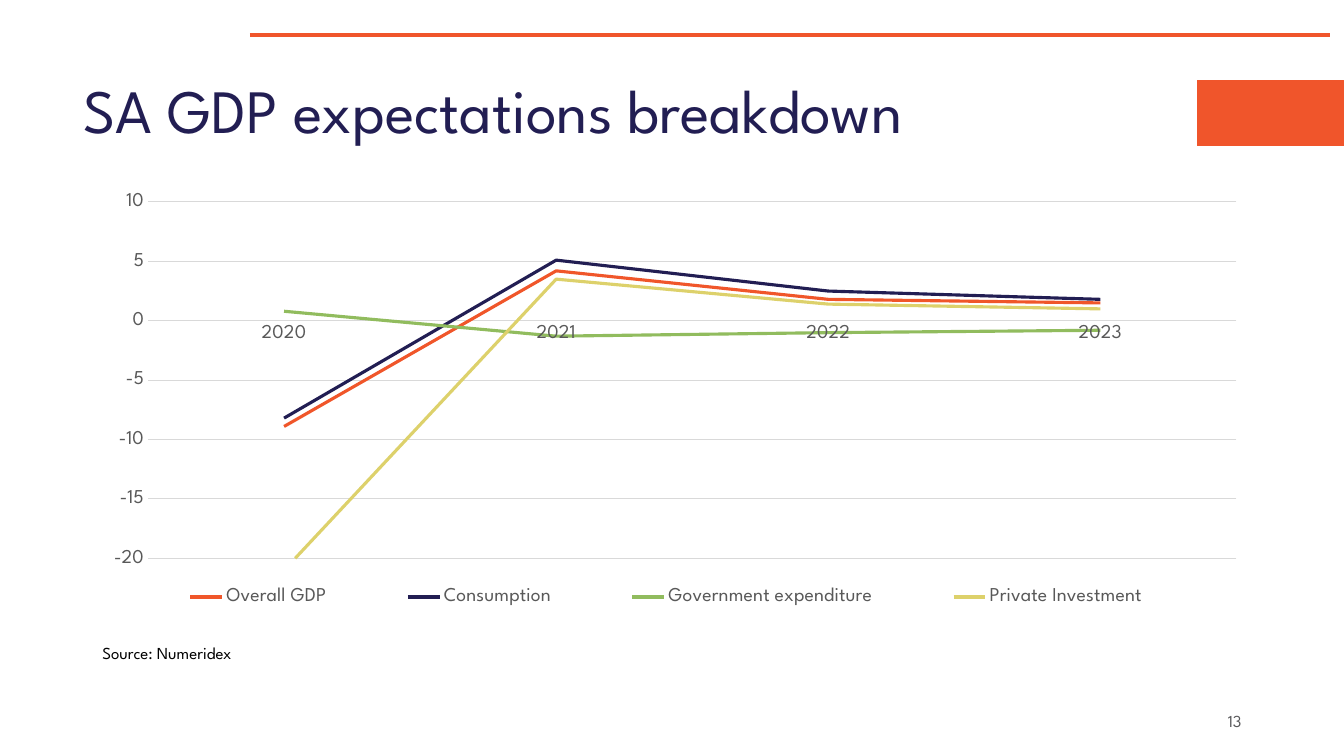
from typing import NamedTuple

from lxml.etree import SubElement
from pptx import Presentation
from pptx.chart.data import CategoryChartData as ChartData
from pptx.dml.color import RGBColor
from pptx.enum.chart import XL_CHART_TYPE as Kind, XL_LEGEND_POSITION as Place, XL_TICK_MARK as Tick
from pptx.enum.shapes import MSO_CONNECTOR as Link, MSO_SHAPE as Form
from pptx.enum.text import MSO_ANCHOR as Anchor, MSO_AUTO_SIZE as Fit, PP_ALIGN as Align
from pptx.oxml import parse_xml
from pptx.oxml.ns import nsdecls, qn
from pptx.util import Pt

FONT = "League Spartan"
ORANGE = RGBColor(0xF0, 0x55, 0x2B)
CORAL = RGBColor(0xF0, 0x56, 0x2A)
NAVY = RGBColor(0x22, 0x1E, 0x53)
GREEN = RGBColor(0x91, 0xBC, 0x5E)
YELLOW = RGBColor(0xDD, 0xD1, 0x6B)
GREY = RGBColor(0x59, 0x59, 0x59)
SLATE = RGBColor(0x58, 0x58, 0x5A)
PALE = RGBColor(0xD9, 0xD9, 0xD9)
BLACK = RGBColor(0, 0, 0)


class Box(NamedTuple):
    x: float
    y: float
    w: float
    h: float

    def pts(self) -> tuple:
        return tuple(Pt(n) for n in self)


class Note(NamedTuple):
    text: str
    box: Box
    color: RGBColor
    align: Align
    anchor: Anchor


class Trend(NamedTuple):
    name: str
    vals: tuple
    color: RGBColor


YEARS = ("2020", "2021", "2022", "2023")
TRENDS = (
    Trend("Overall GDP", (-8.9, 4.2, 1.8, 1.5), CORAL),
    Trend("Consumption", (-8.2, 5.1, 2.5, 1.8), NAVY),
    Trend("Government expenditure", (0.8, -1.3, -1, -0.8), GREEN),
    Trend("Private Investment", (-21, 3.5, 1.4, 1), YELLOW),
)
NOTES = (
    Note("13", Box(678, 500.5, 216, 28.75), SLATE, Align.RIGHT, Anchor.MIDDLE),
    Note("Source: Numeridex", Box(66, 455.75, 340, 21.8), BLACK, Align.LEFT, Anchor.TOP),
)


def style(font, size: float, color: RGBColor) -> None:
    font.name, font.size = FONT, Pt(size)
    font.color.rgb = color


def add_note(slide, note: Note) -> None:
    frame = slide.shapes.add_textbox(*note.box.pts()).text_frame
    frame.word_wrap = True
    frame.vertical_anchor = note.anchor
    frame.text = note.text
    para = frame.paragraphs[0]
    para.alignment = note.align
    style(para.runs[0].font, 12, note.color)


def lay_out(part, spot: int, area: Box, inner: bool = False) -> None:
    """Place a chart part by fractions of the chart's size."""
    for old in part.findall(qn("c:layout")):
        part.remove(old)
    layout = parse_xml(f"<c:layout {nsdecls('c')}><c:manualLayout/></c:layout>")
    rules = [("layoutTarget", "inner")] if inner else []
    rules += [("xMode", "edge"), ("yMode", "edge")]
    rules += [(key, str(val)) for key, val in zip("xywh", area)]
    for key, val in rules:
        SubElement(layout[0], qn(f"c:{key}")).set("val", val)
    part.insert(spot, layout)


def add_trends(slide, box: Box) -> None:
    data = ChartData()
    data.categories = YEARS
    for trend in TRENDS:
        data.add_series(trend.name, trend.vals)
    chart = slide.shapes.add_chart(Kind.LINE, *box.pts(), data).chart
    chart.has_title = False
    style(chart.font, 10, BLACK)

    # Series lines
    plot = chart.plots[0]
    plot.vary_by_categories = False
    for row, trend in zip(plot.series, TRENDS):
        row.smooth = False
        row.format.line.width = Pt(2.25)
        row.format.line.color.rgb = trend.color

    # Axes and grid
    years, rates = chart.category_axis, chart.value_axis
    for axis in (years, rates):
        axis.major_tick_mark = axis.minor_tick_mark = Tick.NONE
        style(axis.tick_labels.font, 14, GREY)
    rates.minimum_scale, rates.maximum_scale, rates.major_unit = -20, 10, 5
    rates.has_major_gridlines = True
    rates.format.line.fill.background()
    for line in (years.format.line, rates.major_gridlines.format.line):
        line.width = Pt(0.75)
        line.color.rgb = PALE

    # Legend and plot area
    chart.has_legend = True
    legend = chart.legend
    legend.position = Place.BOTTOM
    legend.include_in_layout = False
    style(legend.font, 14, GREY)
    root = chart.element
    lay_out(root.find(".//" + qn("c:legend")), 1, Box(0.02, 0.87, 0.95, 0.08))
    lay_out(root.find(".//" + qn("c:plotArea")), 0, Box(0.048, 0.041, 0.939, 0.784), True)


def main() -> None:
    deck = Presentation()
    deck.slide_width, deck.slide_height = Pt(960), Pt(540)
    slide = deck.slides.add_slide(deck.slide_layouts[5])
    shapes = slide.shapes

    # Top rule
    rule = shapes.add_connector(Link.STRAIGHT, Pt(178.5), Pt(25), Pt(950), Pt(25))
    rule.line.color.rgb = ORANGE
    rule.line.width = Pt(3)
    SubElement(rule.element.spPr, qn("a:effectLst"))

    # Title
    title = shapes.title
    title.left, title.top, title.width, title.height = Box(52.5, 28.75, 828, 104.4).pts()
    frame = title.text_frame
    frame.text = "SA GDP expectations breakdown"
    frame.auto_size = Fit.NONE
    frame.vertical_anchor = Anchor.MIDDLE
    para = frame.paragraphs[0]
    para.alignment = Align.LEFT
    para.line_spacing = 0.9
    style(para.runs[0].font, 44, NAVY)

    # Side block
    block = shapes.add_shape(Form.RECTANGLE, *Box(855.25, 57.5, 104.75, 46.75).pts())
    block.shadow.inherit = False
    block.fill.solid()
    block.fill.fore_color.rgb = block.line.color.rgb = ORANGE
    block.line.width = Pt(0.75)

    # Chart and notes
    add_trends(slide, Box(66, 131, 828, 324.75))
    for note in NOTES:
        add_note(slide, note)

    deck.save("out.pptx")


if __name__ == "__main__":
    main()
